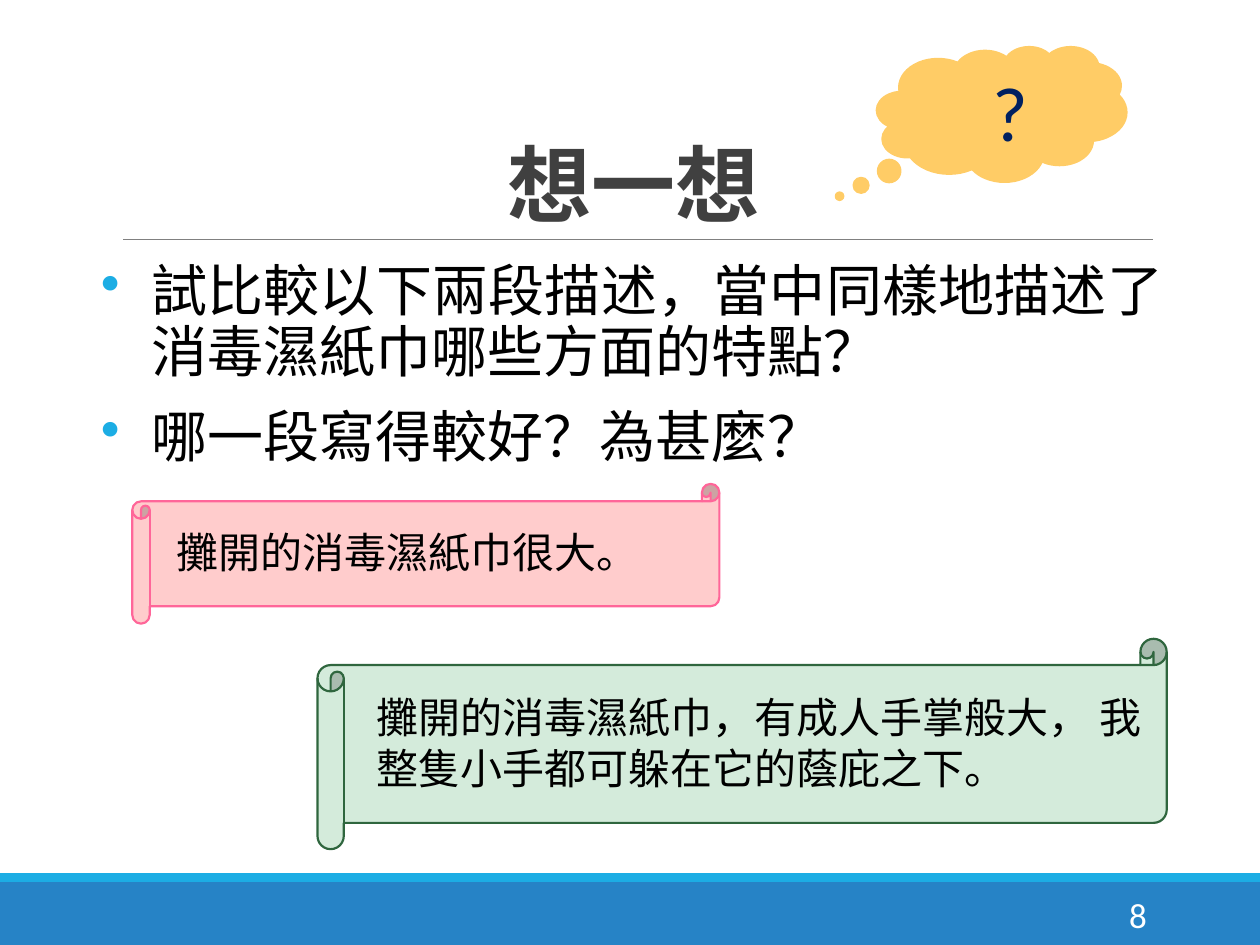
import pptx
import pptx.util
import pptx.dml.color
import pptx.enum.shapes
import pptx.enum.text
import pptx.oxml.ns
from lxml import etree

Inches, Pt = pptx.util.Inches, pptx.util.Pt
SHAPE = pptx.enum.shapes.MSO_SHAPE
ALIGN = pptx.enum.text.PP_ALIGN
ANCHOR = pptx.enum.text.MSO_ANCHOR
qn = pptx.oxml.ns.qn

CJK, LATIN = "Noto Sans CJK SC", "Calibri"
COLORS = {
    "blue": "2683C6", "sky": "1CADE4", "gray": "808080", "dark": "404040",
    "black": "000000", "white": "FFFFFF", "navy": "002060",
    "pink": "FFCCCC", "rose": "FF6699", "mint": "D4EBDB", "green": "2F663E",
    "gold": "FFCC66",
}


def color(name):
    return pptx.dml.color.RGBColor.from_string(COLORS[name])


class Page:
    """Holds the current slide and draws styled elements on it."""

    def __init__(self, slide):
        self.slide = slide
        self.shapes = slide.shapes

    def shape(self, kind, box, fill, line=None):
        item = self.shapes.add_shape(kind, *map(Inches, box))
        item.shadow.inherit = False
        item.fill.solid()
        item.fill.fore_color.rgb = color(fill)
        if line:
            item.line.color.rgb = color(line)
            item.line.width = Pt(1.25)
        else:
            item.line.fill.background()
        return item

    def rule(self, left, right, top):
        line = self.shapes.add_connector(
            pptx.enum.shapes.MSO_CONNECTOR.STRAIGHT,
            Inches(left), Inches(top), Inches(right), Inches(top))
        line.line.color.rgb = color("gray")
        line.line.width = Pt(0.5)
        etree.SubElement(line._element.spPr, qn("a:effectLst"))

    def style(self, para, size, tint, face=CJK, bold=False, align=ALIGN.LEFT):
        para.alignment = align
        font = para.font
        font.size, font.bold, font.name = Pt(size), bold, face
        font.color.rgb = color(tint)
        # East Asian glyphs take their face from a:ea
        props = para._p.pPr.find(qn("a:defRPr"))
        etree.SubElement(props, qn("a:ea"), typeface=face)

    def text(self, box, lines, size, tint, anchor=ANCHOR.TOP, **look):
        frame = self.shapes.add_textbox(*map(Inches, box)).text_frame
        frame.word_wrap = True
        frame.vertical_anchor = anchor
        frame.text = "\n".join(lines)
        for para in frame.paragraphs:
            self.style(para, size, tint, **look)
        return frame

    def bullet(self, para, indent):
        props = para._p.get_or_add_pPr()
        props.set("marL", str(Inches(indent)))
        props.set("indent", str(-Inches(indent)))
        font = props.find(qn("a:defRPr"))
        tint = etree.Element(qn("a:buClr"))
        etree.SubElement(tint, qn("a:srgbClr"), val=COLORS["sky"])
        font.addprevious(tint)
        font.addprevious(etree.Element(qn("a:buChar"), char="•"))

    def bullets(self, box, lines, size):
        frame = self.text(box, lines, size, "black", align=ALIGN.JUSTIFY)
        frame.margin_left = frame.margin_right = 0
        for para in frame.paragraphs:
            para.line_spacing = 0.9
            para.space_before, para.space_after = Pt(12), Pt(2)
            self.bullet(para, 0.4)

    def scroll(self, box, fill, line, place, words):
        self.shape(SHAPE.HORIZONTAL_SCROLL, box, fill, line)
        self.text(place, [words], 24, "black")

    def cloud(self, box, tail, words):
        item = self.shape(SHAPE.CLOUD_CALLOUT, box, "gold", "gold")
        item.adjustments[0], item.adjustments[1] = tail
        frame = item.text_frame
        frame.vertical_anchor = ANCHOR.MIDDLE
        frame.margin_left = Inches(0.38)
        frame.text = words
        self.style(frame.paragraphs[0], 44, "navy", LATIN, align=ALIGN.CENTER)


def main():
    deck = pptx.Presentation()
    deck.slide_width, deck.slide_height = Inches(10), Inches(7.5)
    page = Page(deck.slides.add_slide(deck.slide_layouts[6]))

    page.shape(SHAPE.RECTANGLE, (0, 7, 10, 0.5), "blue")
    page.shape(SHAPE.RECTANGLE, (0, 6.93, 10, 0.07), "sky")
    page.rule(0.98, 9.15, 1.9)

    title = page.text((0.9, 0.31, 8.25, 1.59), ["想一想"], 48, "dark",
                      ANCHOR.BOTTOM, bold=True, align=ALIGN.CENTER)
    title.paragraphs[0].line_spacing = 0.85
    page.bullets((0.8, 2.04, 8.44, 4.4), [
        "試比較以下兩段描述，當中同樣地描述了消毒濕紙巾哪些方面的特點？",
        "哪一段寫得較好？為甚麼？",
    ], 32)
    page.text((8.12, 7.06, 1.08, 0.4), ["8"], 20, "white",
              ANCHOR.MIDDLE, face=LATIN, align=ALIGN.RIGHT)

    page.scroll((1.05, 3.84, 4.66, 1.11), "pink", "rose",
                (1.3, 4.13, 6.34, 0.5), "攤開的消毒濕紙巾很大。")
    page.scroll((2.52, 5.07, 6.74, 1.67), "mint", "green",
                (2.89, 5.44, 6.34, 0.91),
                "攤開的消毒濕紙巾，有成人手掌般大， 我整隻小手都可躲在它的蔭庇之下。")
    page.cloud((6.96, 0.37, 1.98, 1.07), (-0.65, 0.61), "?")

    deck.save("out.pptx")


if __name__ == "__main__":
    main()
